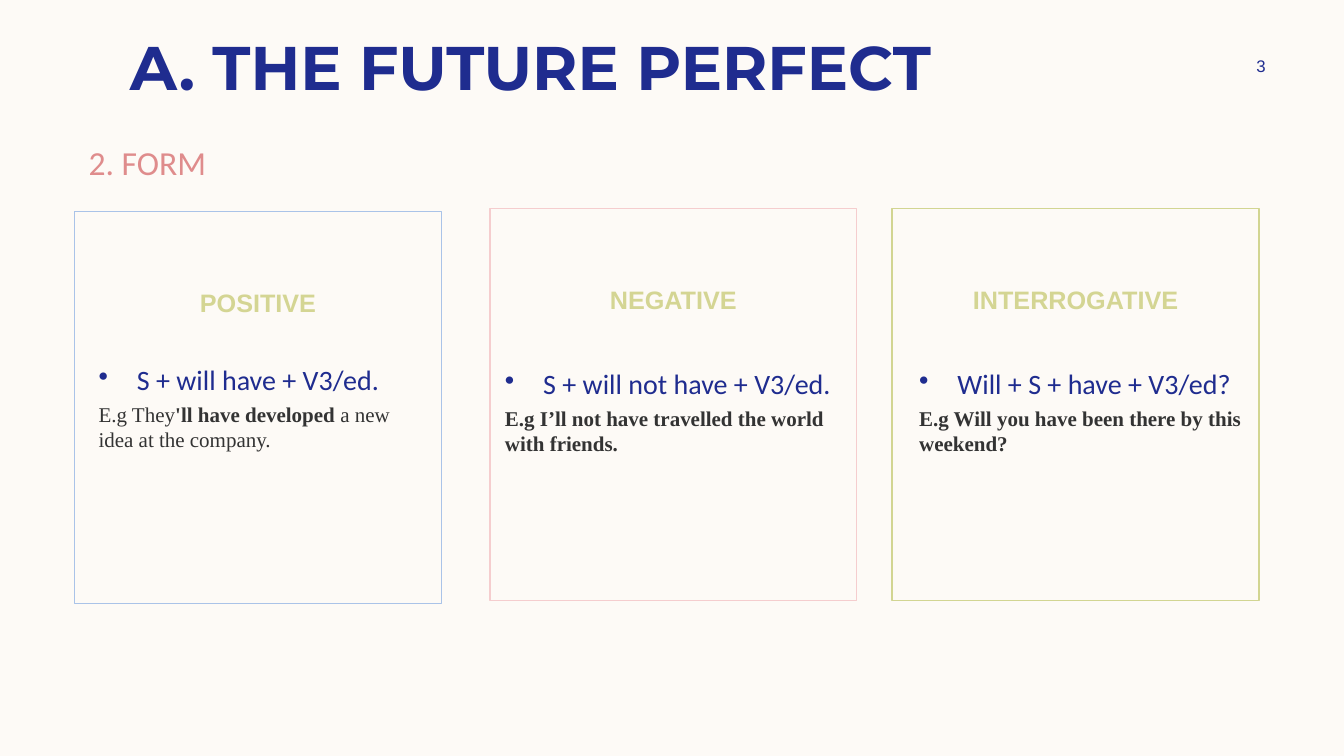
import pptx
import pptx.dml.color
import pptx.enum.shapes
import pptx.enum.text
import pptx.oxml
import pptx.oxml.ns
import pptx.util

Pt = pptx.util.Pt
Inches = pptx.util.Inches
RGBColor = pptx.dml.color.RGBColor
ALIGN = pptx.enum.text.PP_ALIGN
ANCHOR = pptx.enum.text.MSO_ANCHOR

WIDTH, HEIGHT = Inches(13.33), Inches(7.5)

CREAM = RGBColor(0xFD, 0xFA, 0xF6)
NAVY = RGBColor(0x1F, 0x2C, 0x8F)
CORAL = RGBColor(0xDF, 0x8C, 0x8C)
OLIVE = RGBColor(0xD4, 0xD5, 0x93)
CHARCOAL = RGBColor(0x33, 0x33, 0x33)
BLUE_EDGE = RGBColor(0xAA, 0xC3, 0xE8)
PINK_EDGE = RGBColor(0xF5, 0xCD, 0xCE)
GREEN_EDGE = RGBColor(0xD2, 0xD5, 0x92)

# Text formats: font settings and colour
TITLE = ({"name": "Montserrat", "size": Pt(44), "bold": True}, NAVY)
SECTION = ({"name": "Calibri", "size": Pt(24)}, CORAL)
NUMBER = ({"name": "Arial", "size": Pt(12)}, NAVY)
HEADING = ({"name": "Arial", "size": Pt(18), "bold": True}, OLIVE)
FORMULA = ({"name": "Calibri", "size": Pt(20)}, NAVY)
EXAMPLE = ({"name": "Times New Roman", "size": Pt(15), "bold": False}, CHARCOAL)
EXAMPLE_BOLD = ({**EXAMPLE[0], "bold": True}, CHARCOAL)

# Card and text box sizes, in percent of the slide
CARD_WIDTH, CARD_HEIGHT, BODY_HEIGHT = 27.3, 51.87, 32.13

# Card left and top, edge, heading, body left, top and width, formula, example
CARDS = [
    ((5.55, 28), BLUE_EDGE, "POSITIVE", (6.6, 47.33, 25.2),
     "S + will have + V3/ed.",
     [("E.g They", EXAMPLE), ("'ll have developed", EXAMPLE_BOLD),
      (" a new idea at the company.", EXAMPLE)]),
    ((36.45, 27.6), PINK_EDGE, "NEGATIVE", (36.83, 47.87, 28.28),
     "S + will not have + V3/ed.",
     [("E.g I’ll not have travelled the world with friends.", EXAMPLE_BOLD)]),
    ((66.38, 27.6), GREEN_EDGE, "INTERROGATIVE", (67.65, 47.87, 25.8),
     "Will + S + have + V3/ed?",
     [("E.g Will you have been there by this weekend?", EXAMPLE_BOLD)]),
]


def place(left, top, width, height):
    """Turn percentages of the slide into lengths."""
    return [int(share * side / 100) for share, side in
            ((left, WIDTH), (top, HEIGHT), (width, WIDTH), (height, HEIGHT))]


def write(para, spans, **settings):
    for name, value in settings.items():
        setattr(para, name, value)
    for text, (font, color) in spans:
        span = para.add_run()
        span.text = text
        for name, value in font.items():
            setattr(span.font, name, value)
        span.font.color.rgb = color


def add_bullet(para):
    properties = para._p.get_or_add_pPr()
    properties.set("marL", str(Inches(0.38)))
    properties.set("indent", str(-Inches(0.38)))
    bullet = pptx.oxml.parse_xml(
        f'<a:buChar {pptx.oxml.ns.nsdecls("a")} char="•"/>')
    properties.append(bullet)


def add_text(page, area, anchor=ANCHOR.TOP):
    frame = page.shapes.add_textbox(*place(*area)).text_frame
    frame.word_wrap = True
    frame.vertical_anchor = anchor
    return frame


def add_card(page, corner, edge, heading):
    box = page.shapes.add_shape(pptx.enum.shapes.MSO_SHAPE.RECTANGLE,
                                *place(*corner, CARD_WIDTH, CARD_HEIGHT))
    box.shadow.inherit = False
    box.fill.background()
    box.line.color.rgb = edge
    box.line.width = Pt(1)
    frame = box.text_frame
    frame.word_wrap = True
    frame.vertical_anchor = ANCHOR.TOP
    frame.margin_top = Inches(0.75)
    write(frame.paragraphs[0], [(heading, HEADING)], alignment=ALIGN.CENTER)


def add_body(page, area, formula, example):
    frame = add_text(page, (*area, BODY_HEIGHT))
    first = frame.paragraphs[0]
    write(first, [(formula, FORMULA)], space_before=Pt(3.6))
    add_bullet(first)
    write(frame.add_paragraph(), example, space_before=Pt(3.6))


def main():
    deck = pptx.Presentation()
    deck.slide_width, deck.slide_height = WIDTH, HEIGHT
    page = deck.slides.add_slide(deck.slide_layouts[6])
    page.background.fill.solid()
    page.background.fill.fore_color.rgb = CREAM

    # Page number
    frame = add_text(page, (89.78, 6.67, 8.1, 4), ANCHOR.MIDDLE)
    write(frame.paragraphs[0], [("3", NUMBER)], alignment=ALIGN.CENTER)

    # Three sentence forms
    for corner, edge, heading, area, formula, example in CARDS:
        add_card(page, corner, edge, heading)
        add_body(page, area, formula, example)

    # Title and section
    frame = add_text(page, (5.85, 2.8, 67.28, 11.87), ANCHOR.MIDDLE)
    write(frame.paragraphs[0], [("A. THE FUTURE PERFECT", TITLE)],
          alignment=ALIGN.CENTER)
    frame = add_text(page, (5.85, 15.47, 31.35, 8.67))
    write(frame.paragraphs[0], [("2. FORM", SECTION)], line_spacing=1.5)

    deck.save("out.pptx")


if __name__ == "__main__":
    main()
